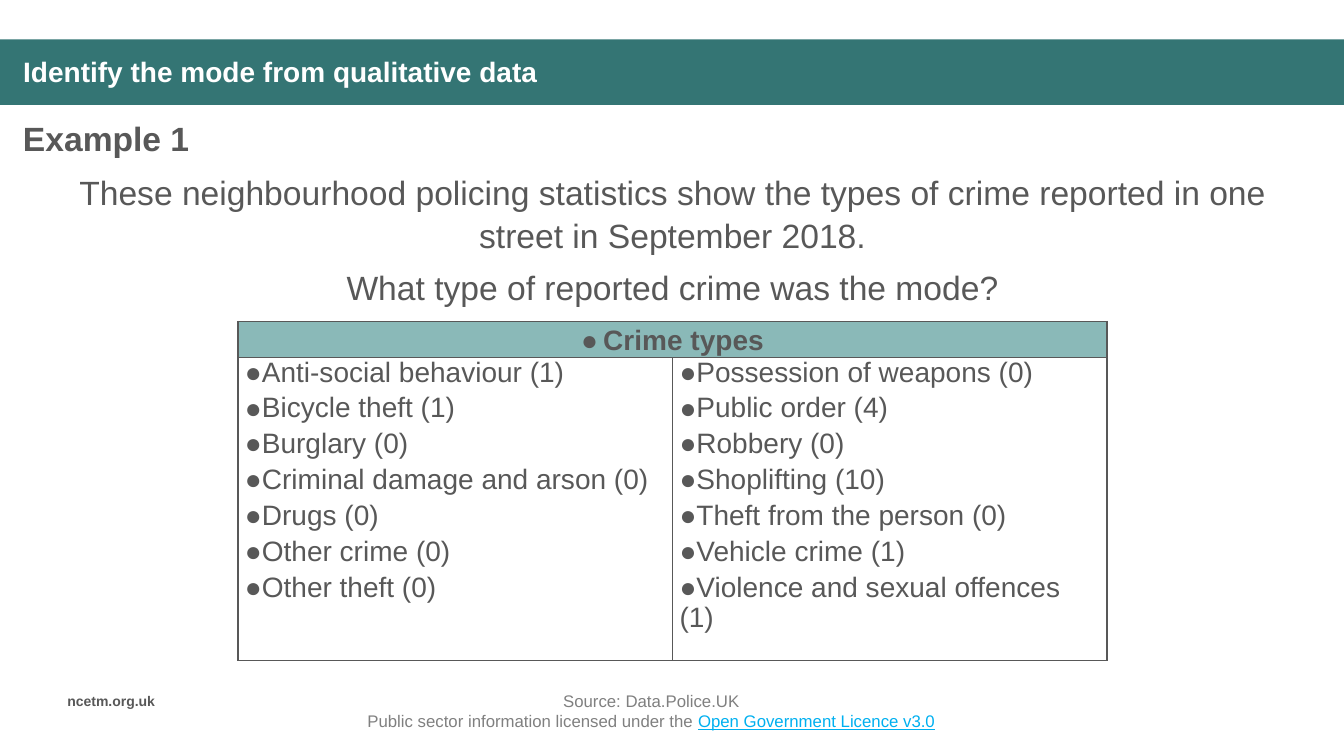
"""Build a slide on finding the mode of reported crime types."""
from lxml.etree import SubElement
from pptx import Presentation
from pptx.dml.color import RGBColor
from pptx.enum.shapes import MSO_SHAPE as Shape
from pptx.enum.text import MSO_ANCHOR as Anchor, MSO_AUTO_SIZE as AutoSize, PP_ALIGN as Align
from pptx.oxml.ns import qn
from pptx.util import Inches, Pt

TEAL = RGBColor(0x34, 0x75, 0x74)
PALE_TEAL = RGBColor(0x8A, 0xB9, 0xB8)
TEXT_GREY = RGBColor(0x58, 0x58, 0x58)
SOURCE_GREY = RGBColor(0x80, 0x80, 0x80)
LINK_BLUE = RGBColor(0x00, 0xB0, 0xF0)
WHITE = RGBColor(0xFF, 0xFF, 0xFF)

CRIME_COLUMNS = [
    ["Anti-social behaviour (1)", "Bicycle theft (1)", "Burglary (0)",
     "Criminal damage and arson (0)", "Drugs (0)", "Other crime (0)", "Other theft (0)"],
    ["Possession of weapons (0)", "Public order (4)", "Robbery (0)", "Shoplifting (10)",
     "Theft from the person (0)", "Vehicle crime (1)", "Violence and sexual offences (1)"],
]


def write(paragraph, text, size=24, color=TEXT_GREY, bold=False, underline=False,
          align=Align.LEFT, line_spacing=None, after=0, bullet_indent=None):
    paragraph.alignment = align
    paragraph.line_spacing = line_spacing
    paragraph.space_before = Pt(0)
    paragraph.space_after = Pt(after)
    if bullet_indent is not None:
        properties = paragraph._p.get_or_add_pPr()
        properties.set("marL", str(Inches(bullet_indent)))
        properties.set("indent", str(-Inches(bullet_indent)))
        SubElement(properties, qn("a:buFont"), typeface="Arial")
        SubElement(properties, qn("a:buChar"), char="●")
    run = paragraph.add_run()
    run.text = text
    font = run.font
    font.name, font.size, font.bold = "Arial", Pt(size), bold
    font.underline = underline
    font.color.rgb = color


def add_frame(left, top, width, height):
    box = slide.shapes.add_textbox(Inches(left), Inches(top), Inches(width), Inches(height))
    box.text_frame.word_wrap = True
    return box.text_frame


presentation = Presentation()
presentation.slide_width = Inches(13.33)
presentation.slide_height = Inches(7.5)
slide = presentation.slides.add_slide(presentation.slide_layouts[5])

title = slide.shapes.title
title.left, title.top = Inches(0.13), Inches(0.49)
title.width, title.height = Inches(11.58), Inches(0.47)
title.text_frame.vertical_anchor = Anchor.MIDDLE
title.text_frame.auto_size = AutoSize.NONE
write(title.text_frame.paragraphs[0], "Identify the mode from qualitative data",
      size=20, color=WHITE, bold=True, line_spacing=0.9)

banner = slide.shapes.add_shape(Shape.RECTANGLE, 0, Inches(0.39), Inches(13.33), Inches(0.65))
banner.shadow.inherit = False
banner.fill.solid()
banner.fill.fore_color.rgb = TEAL
banner.line.fill.background()
title.element.addprevious(banner.element)

website = add_frame(0.57, 6.82, 1.21, 0.27)
write(website.paragraphs[0], "ncetm.org.uk", size=10, bold=True)

example = add_frame(0.13, 1.12, 6.66, 0.5)
write(example.paragraphs[0], "Example 1", bold=True)

question = add_frame(0.33, 1.63, 12.68, 1.4)
write(question.paragraphs[0], "These neighbourhood policing statistics show the types of crime "
      "reported in one street in September 2018.", align=Align.CENTER, line_spacing=1.07, after=6)
write(question.add_paragraph(), "What type of reported crime was the mode?",
      align=Align.CENTER, line_spacing=1.07, after=6)

table = slide.shapes.add_table(2, 2, Inches(2.36), Inches(3.19), Inches(8.62), Inches(3.36)).table
table.first_row = table.horz_banding = False
table.rows[0].height, table.rows[1].height = Inches(0.36), Inches(3)
for cell in table.iter_cells():
    cell.margin_left = cell.margin_right = Inches(0.07)
    cell.margin_top = cell.margin_bottom = 0
    cell_properties = cell._tc.get_or_add_tcPr()
    for side in ("lnL", "lnR", "lnT", "lnB"):
        border = SubElement(cell_properties, qn(f"a:{side}"), w=str(Pt(1)))
        border_fill = SubElement(border, qn("a:solidFill"))
        SubElement(border_fill, qn("a:srgbClr"), val=str(TEXT_GREY))
    cell.fill.background()

header = table.cell(0, 0)
header.merge(table.cell(0, 1))
header.vertical_anchor = Anchor.MIDDLE
header.fill.solid()
header.fill.fore_color.rgb = PALE_TEAL
write(header.text_frame.paragraphs[0], "Crime types", size=20, bold=True,
      align=Align.CENTER, line_spacing=1.07, bullet_indent=0.22)

for column, crimes in enumerate(CRIME_COLUMNS):
    frame = table.cell(1, column).text_frame
    for index, crime in enumerate(crimes):
        paragraph = frame.add_paragraph() if index else frame.paragraphs[0]
        write(paragraph, crime, size=20, line_spacing=0.97, after=4, bullet_indent=0)

source = add_frame(2.64, 6.8, 7.64, 0.5).paragraphs[0]
write(source, "Source: Data.Police.UK", size=12, color=SOURCE_GREY, align=Align.CENTER)
source.add_line_break()
write(source, "Public sector information licensed under the ", size=12, color=SOURCE_GREY,
      align=Align.CENTER)
write(source, "Open Government Licence v3.0", size=12, color=LINK_BLUE, underline=True,
      align=Align.CENTER)

presentation.save("out.pptx")
